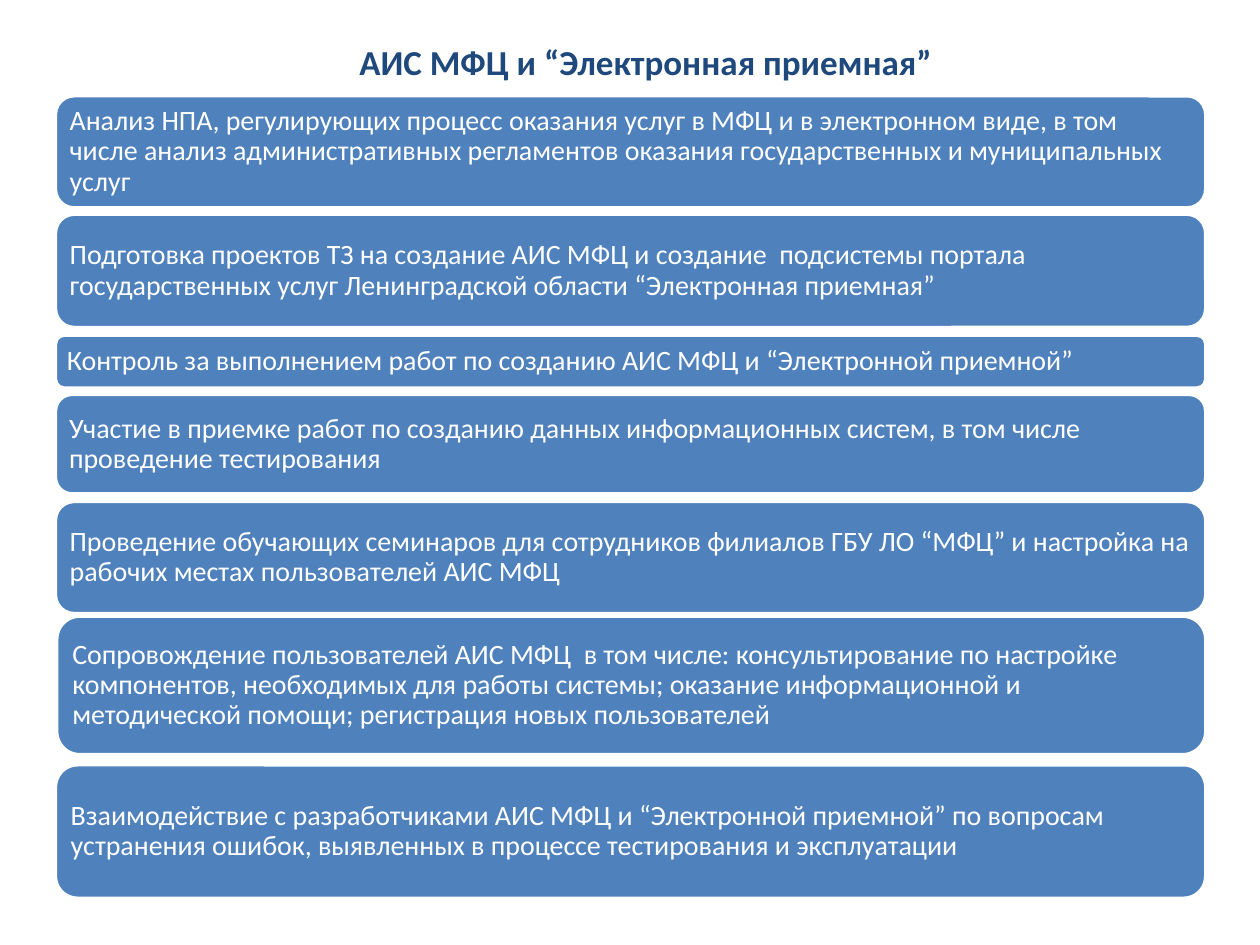
from pptx import Presentation
from pptx import util as u
from pptx.dml.color import RGBColor
from pptx.enum import shapes, text

NAVY = RGBColor(0x1F, 0x49, 0x7D)
BLUE = RGBColor(0x4F, 0x81, 0xBD)
WHITE = RGBColor(0xFF, 0xFF, 0xFF)

LEFT, WIDTH = 0.44, 9.13
TASKS = [
    (LEFT, 0.76, WIDTH, 0.89,
     "Анализ НПА, регулирующих процесс оказания услуг в МФЦ и в электронном виде, "
     "в том числе анализ административных регламентов оказания государственных "
     "и муниципальных услуг"),
    (LEFT, 1.7, WIDTH, 0.9,
     "Подготовка проектов ТЗ на создание АИС МФЦ и создание  подсистемы портала "
     "государственных услуг Ленинградской области “Электронная приемная”"),
    (LEFT, 2.66, WIDTH, 0.42,
     "Контроль за выполнением работ по созданию АИС МФЦ и “Электронной приемной”"),
    (LEFT, 3.13, WIDTH, 0.79,
     "Участие в приемке работ по созданию данных информационных систем, "
     "в том числе проведение тестирования"),
    (LEFT, 3.98, WIDTH, 0.89,
     "Проведение обучающих семинаров для сотрудников филиалов ГБУ ЛО “МФЦ” "
     "и настройка на рабочих местах пользователей АИС МФЦ"),
    (0.45, 4.89, 9.12, 1.1,
     "Сопровождение пользователей АИС МФЦ  в том числе: консультирование по настройке "
     "компонентов, необходимых для работы системы; оказание информационной и  "
     "методической помощи; регистрация новых пользователей"),
    (LEFT, 6.07, WIDTH, 1.06,
     "Взаимодействие с разработчиками АИС МФЦ и “Электронной приемной” по вопросам "
     "устранения ошибок, выявленных в процессе тестирования и эксплуатации"),
]


class SlideBuilder:
    font = "Calibri"

    def __init__(self, slide):
        self.s = slide

    def set_text(self, sp, words, size, color, align, bold=False):
        tf = sp.text_frame
        tf.word_wrap = True
        tf.vertical_anchor = text.MSO_ANCHOR.MIDDLE
        p = tf.paragraphs[0]
        p.text = words
        p.alignment = align
        p.font.name = self.font
        p.font.size = u.Pt(size)
        p.font.bold = bold
        p.font.color.rgb = color
        return tf

    def title(self, left, top, width, height, words):
        sp = self.s.shapes.add_textbox(*map(u.Inches, (left, top, width, height)))
        self.set_text(sp, words, 20, NAVY, text.PP_ALIGN.CENTER, bold=True)

    def task(self, left, top, width, height, words):
        sp = self.s.shapes.add_shape(
            shapes.MSO_SHAPE.ROUNDED_RECTANGLE,
            *map(u.Inches, (left, top, width, height)))
        sp.shadow.inherit = False
        sp.fill.solid()
        sp.fill.fore_color.rgb = BLUE
        sp.line.color.rgb = WHITE
        sp.line.width = u.Pt(2)
        tf = self.set_text(sp, words, 16, WHITE, text.PP_ALIGN.LEFT)
        tf.margin_left = tf.margin_right = u.Inches(0.07)
        tf.margin_top = tf.margin_bottom = u.Inches(0.03)
        tf.paragraphs[0].line_spacing = 0.9


def main():
    prs = Presentation()
    prs.slide_width = u.Inches(10)
    prs.slide_height = u.Inches(7.5)
    builder = SlideBuilder(prs.slides.add_slide(prs.slide_layouts[6]))
    builder.title(0.75, 0.21, 8.75, 0.55, "АИС МФЦ и “Электронная приемная”")
    for task in TASKS:
        builder.task(*task)
    prs.save("out.pptx")


if __name__ == "__main__":
    main()
